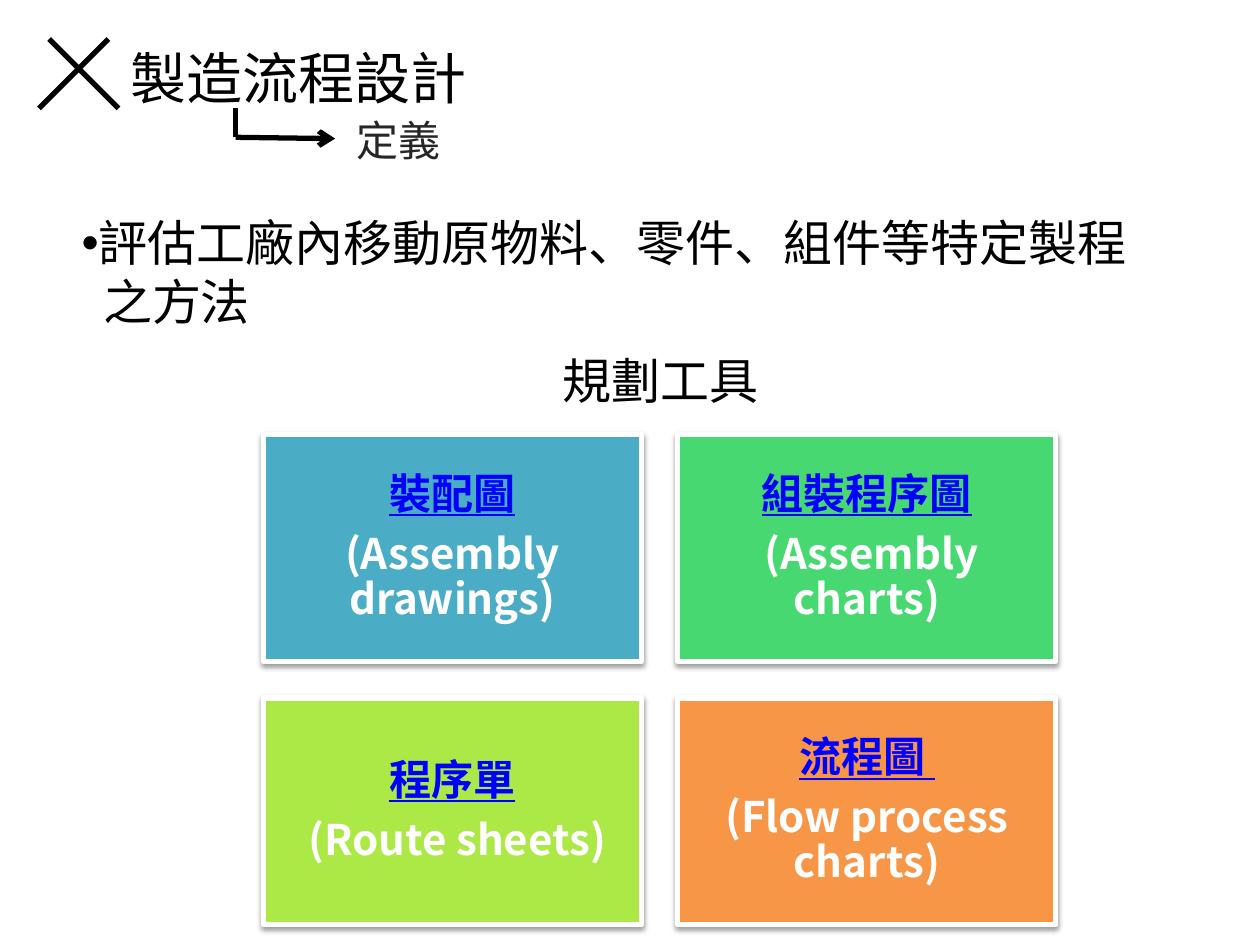
from dataclasses import dataclass

from lxml.etree import SubElement
from pptx import Presentation
from pptx.dml.color import RGBColor
from pptx.enum.shapes import MSO_CONNECTOR, MSO_SHAPE
from pptx.enum.text import MSO_ANCHOR, PP_ALIGN
from pptx.oxml import parse_xml
from pptx.oxml.ns import nsdecls, qn
from pptx.util import Inches, Pt


@dataclass(frozen=True)
class Theme:
    font: str = "Noto Sans CJK SC"
    black: str = "000000"
    grey: str = "262626"
    white: str = "FFFFFF"
    link: str = "0000FF"
    blue: str = "4BACC6"
    green: str = "47D872"
    lime: str = "ACE946"
    orange: str = "F79646"
    title: int = 32
    body: int = 28
    label: int = 24
    stroke: int = 3


theme = Theme()


def write(p, text, size, color=theme.black, bold=False, underline=False,
          align=PP_ALIGN.LEFT, spacing=None, after=0):
    p.alignment = align
    p.line_spacing = spacing
    p.space_after = Pt(after)
    r = p.add_run()
    r.text = text
    r.font.name = theme.font
    r.font.size = Pt(size)
    r.font.bold = bold
    r.font.underline = underline
    r.font.color.rgb = RGBColor.from_string(color)
    SubElement(r.font._element, qn("a:ea"), typeface=theme.font)


def add_line(shapes, x1, y1, x2, y2, arrow=False):
    line = shapes.add_connector(MSO_CONNECTOR.STRAIGHT, Inches(x1), Inches(y1),
                                Inches(x2), Inches(y2))
    line.line.color.rgb = RGBColor.from_string(theme.black)
    line.line.width = Pt(theme.stroke)
    if arrow:
        SubElement(line.line._get_or_add_ln(), qn("a:tailEnd"), type="arrow")
    SubElement(line._element.spPr, qn("a:effectLst"))


prs = Presentation()
prs.slide_width = Inches(10)
prs.slide_height = Inches(7.5)
s = prs.slides.add_slide(prs.slide_layouts[6])

# Cross beside the title
add_line(s.shapes, 0.86, 0.31, 0.31, 0.86)
add_line(s.shapes, 0.39, 0.31, 0.94, 0.86)

# Bent arrow from the title to the definition
bent_arrow = s.shapes.add_group_shape()
add_line(bent_arrow.shapes, 1.87, 0.86, 1.87, 1.09)
add_line(bent_arrow.shapes, 1.87, 1.09, 2.66, 1.1, arrow=True)

# Title, definition and tool heading
headings = [
    ("製造流程設計", 0.94, 0.3, 2.89, 0.64, theme.title, theme.black),
    ("定義", 2.73, 0.86, 3.28, 0.5, theme.label, theme.grey),
    ("規劃工具", 4.37, 2.73, 2.66, 0.57, theme.body, theme.black),
]
for text, x, y, w, h, size, color in headings:
    tf = s.shapes.add_textbox(Inches(x), Inches(y), Inches(w), Inches(h)).text_frame
    tf.word_wrap = True
    write(tf.paragraphs[0], text, size, color)

# Definition: a bulleted line and its indented continuation
tf = s.shapes.add_textbox(Inches(0.55), Inches(1.64), Inches(8.91), Inches(1.04)).text_frame
tf.word_wrap = True
p = tf.paragraphs[0]
write(p, "評估工廠內移動原物料、零件、組件等特定製程", theme.body)
pPr = p._p.get_or_add_pPr()
SubElement(pPr, qn("a:buFont"), typeface="Arial")
SubElement(pPr, qn("a:buChar"), char="•")
p = tf.add_paragraph()
write(p, "之方法", theme.body)
p._p.get_or_add_pPr().set("marL", str(Inches(0.17)))

# Planning tools: two by two cards
cards = [
    ("裝配圖", "(Assembly drawings)", theme.blue),
    ("組裝程序圖", " (Assembly charts)", theme.green),
    ("程序單", " (Route sheets)", theme.lime),
    ("流程圖 ", "(Flow process charts)", theme.orange),
]
left, top, width, height, gap = 2.09, 3.45, 3, 1.8, 0.29
for i, (name, english, fill) in enumerate(cards):
    row, col = divmod(i, 2)
    sp = s.shapes.add_shape(MSO_SHAPE.RECTANGLE, Inches(left + col * (width + gap)),
                            Inches(top + row * (height + gap)),
                            Inches(width), Inches(height))
    sp.fill.solid()
    sp.fill.fore_color.rgb = RGBColor.from_string(fill)
    sp.line.color.rgb = RGBColor.from_string(theme.white)
    sp.line.width = Pt(theme.stroke)
    sp._element.spPr.append(parse_xml(
        f'<a:effectLst {nsdecls("a")}><a:outerShdw blurRad="{Pt(3.1)}" dist="{Pt(1.6)}" '
        f'dir="5400000" rotWithShape="0"><a:srgbClr val="{theme.black}">'
        '<a:alpha val="38000"/></a:srgbClr></a:outerShdw></a:effectLst>'))
    tf = sp.text_frame
    tf.word_wrap = True
    tf.vertical_anchor = MSO_ANCHOR.MIDDLE
    tf.margin_left = tf.margin_right = tf.margin_top = tf.margin_bottom = Inches(0.1)
    card_style = dict(size=theme.label, bold=True, align=PP_ALIGN.CENTER,
                      spacing=0.9, after=8.4)
    write(tf.paragraphs[0], name, color=theme.link, underline=True, **card_style)
    write(tf.add_paragraph(), english, color=theme.white, **card_style)

prs.save("out.pptx")
